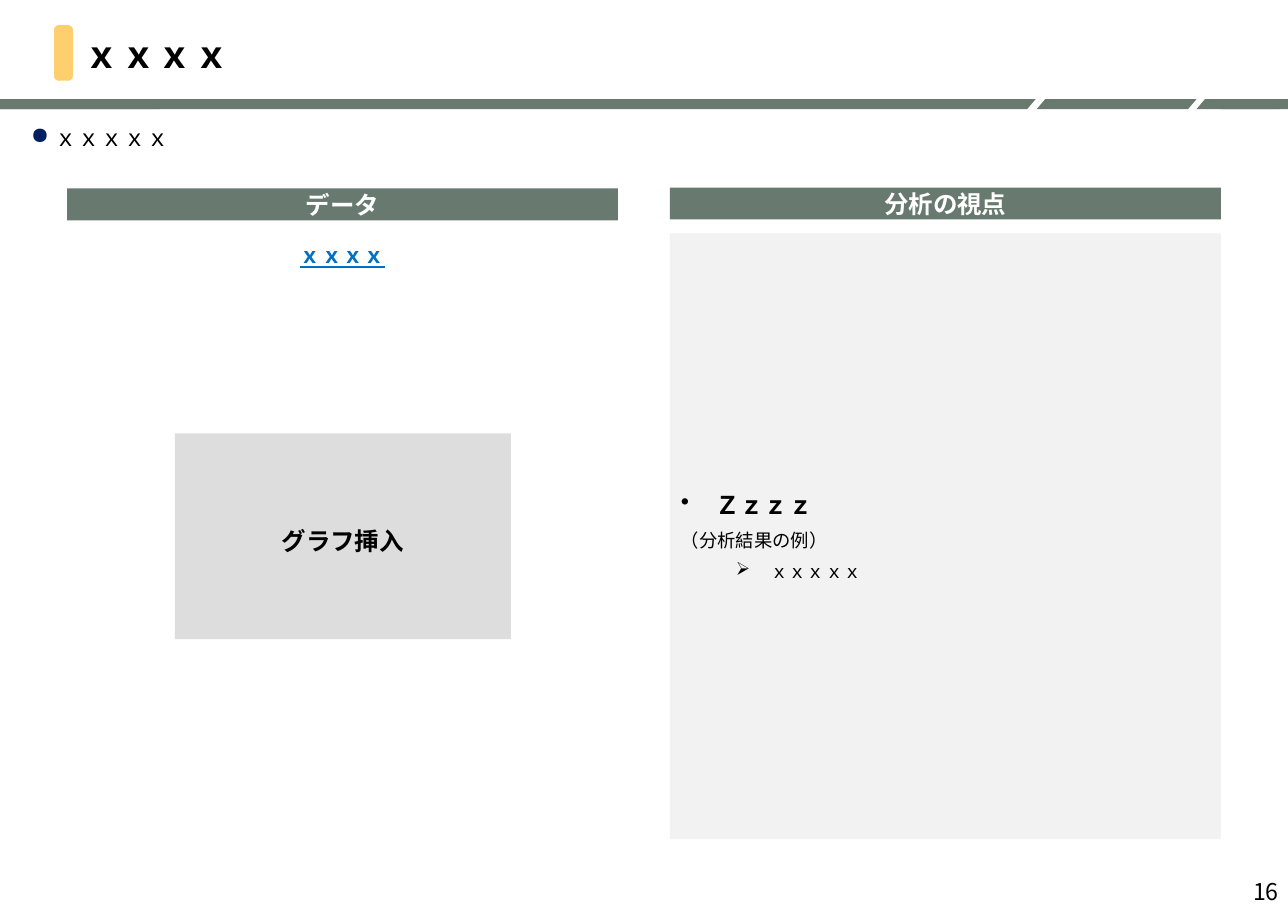
from lxml.etree import SubElement
from pptx import Presentation
from pptx.dml.color import RGBColor
from pptx.enum.shapes import MSO_SHAPE
from pptx.enum.text import MSO_ANCHOR, PP_ALIGN
from pptx.oxml.ns import qn
from pptx.util import Pt

COLORS = {
    "green": "687A70", "yellow": "FFCE6D", "navy": "002060", "blue": "0070C0",
    "pale": "F2F2F2", "gray": "BFBFBF", "black": "000000", "white": "FFFFFF",
}
JAPANESE, LATIN = "Noto Sans CJK JP", "Calibri"
PAGE_WIDTH, PAGE_HEIGHT = 841.68, 595.44
COLUMN_WIDTH, HEADING_HEIGHT = 360, 20.9
LEFT_COLUMN, RIGHT_COLUMN = 43.9, 437.8
BAR_TOP, BAR_HEIGHT, BAR_SLANT = 64.8, 6.48, 0.85
DEFAULT_INSETS = (7.2, 3.6, 7.2, 3.6)

# left, width
SLANTED_BARS = [(0, 676.8), (677.5, 104.4), (781.9, 59.78)]
END_BARS = [(0, 104.4), (797.76, 43.92)]

# text, left, top
HEADINGS = [("分析の視点", RIGHT_COLUMN, 122.6), ("データ", LEFT_COLUMN, 123.1)]

TITLE = [dict(text="ｘｘｘｘ", size=24, bold=True)]
LEAD = [dict(text="ｘｘｘｘｘ", size=15.1, bullet="●", bullet_color="navy", indent=15.1, hanging=15.1)]
DATA_NAME = [dict(text="ｘｘｘｘ", size=14, bold=True, underline=True, color="blue", align=PP_ALIGN.CENTER)]
CHART_AREA = [dict(text="グラフ挿入", size=16, bold=True, font=LATIN, align=PP_ALIGN.CENTER)]
PAGE_NUMBER = [dict(text="16", size=15.1, align=PP_ALIGN.RIGHT)]
VIEWPOINTS = [
    dict(text="Ｚｚｚｚ", size=16, bold=True, bullet="•", indent=22.5, hanging=22.5, after=6),
    dict(text="（分析結果の例）", size=12, after=6),
    dict(text="ｘｘｘｘｘ", size=12, bullet="➢", indent=58.5, hanging=22.5, after=6),
]


def add_bullet(para, line):
    properties = para._p.get_or_add_pPr()
    properties.set("marL", str(Pt(line["indent"])))
    properties.set("indent", str(-Pt(line["hanging"])))
    if "bullet_color" in line:
        color = SubElement(properties, qn("a:buClr"))
        SubElement(color, qn("a:srgbClr"), val=COLORS[line["bullet_color"]])
    SubElement(properties, qn("a:buChar"), char=line["bullet"])


def write_lines(shape, lines, insets=DEFAULT_INSETS, anchor=MSO_ANCHOR.MIDDLE):
    frame = shape.text_frame
    frame.word_wrap = True
    frame.vertical_anchor = anchor
    for side, inset in zip(("left", "top", "right", "bottom"), insets):
        setattr(frame, f"margin_{side}", Pt(inset))
    for index, line in enumerate(lines):
        para = frame.add_paragraph() if index else frame.paragraphs[0]
        if "bullet" in line:
            add_bullet(para, line)
        para.alignment = line.get("align", PP_ALIGN.LEFT)
        para.space_after = Pt(line.get("after", 0))
        span = para.add_run()
        span.text = line["text"]
        font_name = line.get("font", JAPANESE)
        formats = {
            "name": font_name, "size": Pt(line["size"]),
            "bold": line.get("bold", False), "underline": line.get("underline", False),
        }
        for name, value in formats.items():
            setattr(span.font, name, value)
        span.font.color.rgb = RGBColor.from_string(COLORS[line.get("color", "black")])
        SubElement(span._r.get_or_add_rPr(), qn("a:ea"), typeface=font_name)


def add_block(page, kind, area, color, adjustment=None):
    block = page.shapes.add_shape(kind, *map(Pt, area))
    block.shadow.inherit = False
    block.fill.solid()
    block.fill.fore_color.rgb = RGBColor.from_string(COLORS[color])
    block.line.fill.background()
    if adjustment is not None:
        block.adjustments[0] = adjustment
    return block


def add_text(page, area, lines, **layout):
    write_lines(page.shapes.add_textbox(*map(Pt, area)), lines, **layout)


def add_header(page):
    for left, width in SLANTED_BARS:
        add_block(page, MSO_SHAPE.PARALLELOGRAM, (left, BAR_TOP, width, BAR_HEIGHT), "green", BAR_SLANT)
    add_block(page, MSO_SHAPE.ROUNDED_RECTANGLE, (35.3, 16.4, 12.4, 36.4), "yellow", 0.25)
    for left, width in END_BARS:
        add_block(page, MSO_SHAPE.RECTANGLE, (left, BAR_TOP, width, BAR_HEIGHT), "green")
    add_text(page, (47.5, 16.56, 774, 36.72), TITLE)
    add_text(page, (17.3, 77.8, 807.8, 24.5), LEAD, insets=(2.9,) * 4, anchor=MSO_ANCHOR.TOP)


def add_columns(page):
    panel = add_block(page, MSO_SHAPE.RECTANGLE, (RIGHT_COLUMN, 152.6, COLUMN_WIDTH, 396), "pale")
    write_lines(panel, VIEWPOINTS)
    for text, left, top in HEADINGS:
        heading = add_block(page, MSO_SHAPE.RECTANGLE, (left, top, COLUMN_WIDTH, HEADING_HEIGHT), "green")
        write_lines(heading, [dict(text=text, size=16, bold=True, color="white", align=PP_ALIGN.CENTER)])
    add_text(page, (LEFT_COLUMN, 154.1, COLUMN_WIDTH, 25.2), DATA_NAME)
    chart_area = add_block(page, MSO_SHAPE.RECTANGLE, (114.2, 283.2, 219.6, 134.6), "gray")
    fill_color = chart_area.fill._xPr.find(qn("a:solidFill"))[0]
    SubElement(fill_color, qn("a:alpha"), val="52000")
    write_lines(chart_area, CHART_AREA, insets=(8.6, 11.5, 8.6, 5.8))


def main():
    deck = Presentation()
    deck.slide_width, deck.slide_height = Pt(PAGE_WIDTH), Pt(PAGE_HEIGHT)
    page = deck.slides.add_slide(deck.slide_layouts[6])
    add_header(page)
    add_columns(page)
    add_text(page, (PAGE_WIDTH - 195, 569.5, 195, 25.9), PAGE_NUMBER, insets=(7.2, 3.6, 6, 3.6))
    deck.save("out.pptx")


if __name__ == "__main__":
    main()
